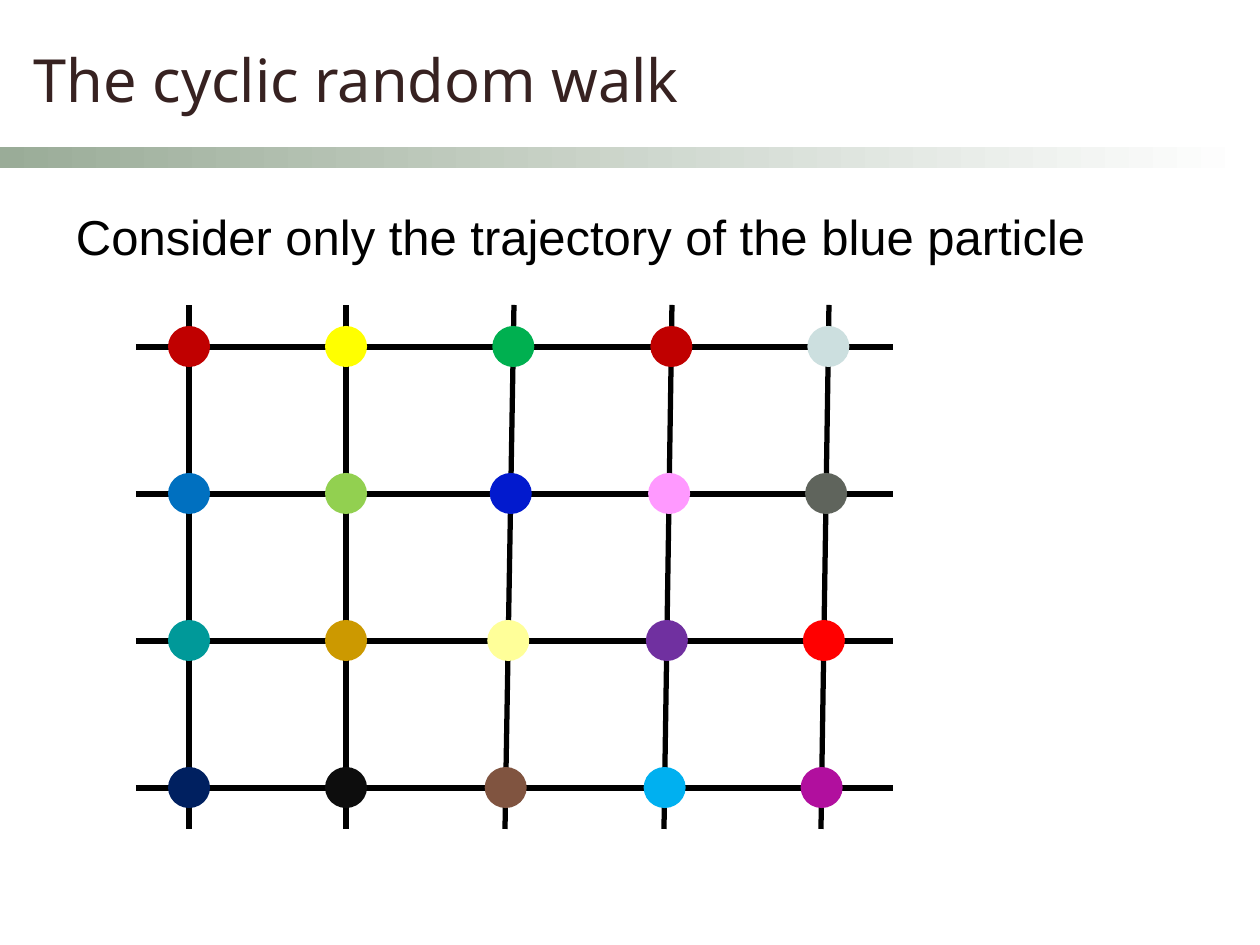
from lxml.etree import SubElement
from pptx import Presentation
from pptx.dml.color import RGBColor
from pptx.enum.shapes import MSO_CONNECTOR, MSO_SHAPE
from pptx.enum.text import MSO_ANCHOR, MSO_AUTO_SIZE, PP_ALIGN
from pptx.oxml.ns import qn
from pptx.util import Emu, Pt


def px(n):
    return Emu(round(n * 914400 / 126))


def tint(code):
    return RGBColor.from_string(code)


class Deck:
    ink = "000000"
    font = "Arial"
    width = 3

    def __init__(self):
        self.file = Presentation()
        self.file.slide_width, self.file.slide_height = px(1260), px(945)
        self.slide = self.file.slides.add_slide(self.file.slide_layouts[5])

    def place(self, item, box):
        item.left, item.top, item.width, item.height = map(px, box)

    def label(self, item, runs, size, font, color, pads, anchor):
        frame = item.text_frame
        frame.word_wrap = True
        frame.auto_size = MSO_AUTO_SIZE.NONE
        frame.vertical_anchor = anchor
        (frame.margin_left, frame.margin_top,
         frame.margin_right, frame.margin_bottom) = map(px, pads)
        para = frame.paragraphs[0]
        para.alignment = PP_ALIGN.LEFT
        for text in runs:
            run = para.add_run()
            run.text = text
            run.font.size = Pt(size)
            run.font.name = font
            run.font.color.rgb = tint(color)

    def title(self, box, runs):
        item = self.slide.shapes.title
        self.place(item, box)
        self.label(item, runs, 34, "Noto Sans", "372221",
                   (13, 8, 18, 8), MSO_ANCHOR.BOTTOM)

    def text(self, box, runs):
        item = self.slide.shapes.add_textbox(*map(px, box))
        self.label(item, runs, 28, self.font, self.ink,
                   (13, 6, 13, 6), MSO_ANCHOR.TOP)

    def shape(self, kind, box):
        item = self.slide.shapes.add_shape(kind, *map(px, box))
        item.shadow.inherit = False
        item.line.fill.background()
        return item

    def bar(self, box, first, last):
        fill = self.shape(MSO_SHAPE.RECTANGLE, box).fill
        fill.gradient()
        fill.gradient_angle = 0
        for stop, color in zip(fill.gradient_stops, (first, last)):
            stop.color.rgb = tint(color)

    def line(self, *ends):
        item = self.slide.shapes.add_connector(
            MSO_CONNECTOR.STRAIGHT, *map(px, ends))
        item.line.color.rgb = tint(self.ink)
        item.line.width = Pt(self.width)
        SubElement(item._element.spPr, qn("a:effectLst"))

    def dot(self, x, y, color):
        item = self.shape(MSO_SHAPE.OVAL, (x - 21, y - 21, 42, 41))
        item.fill.solid()
        item.fill.fore_color.rgb = tint(color)


def main():
    deck = Deck()
    deck.title((21, 27, 1058, 95), ["The cyclic random walk"])
    deck.bar((0, 147, 1249, 21), "9AAC98", "FFFFFF")
    deck.text((63, 201, 1040, 77),
              ["Consider only the trajectory of the blue particle"])

    grid = [
        ["C00000", "FFFF00", "00B050", "C00000", "CCDFDF"],
        ["0070C0", "92D050", "021ACE", "FF99FF", "5F645C"],
        ["009999", "CC9900", "FFFF99", "7030A0", "FF0000"],
        ["002060", "0D0D0D", "805440", "00B0F0", "B10F9E"],
    ]
    top, base = 305, 829
    cols = [(189, 189), (346, 346), (505, 514), (664, 672), (821, 829)]
    rows = [347 + 147 * i for i in range(len(grid))]

    for y in rows:
        deck.line(136, y, 893, y)
    for low, high in cols:
        deck.line(low, base, high, top)
    for y, row in zip(rows, grid):
        part = (base - y) / (base - top)
        for (low, high), color in zip(cols, row):
            deck.dot(low + (high - low) * part, y, color)

    deck.file.save("out.pptx")


if __name__ == "__main__":
    main()
